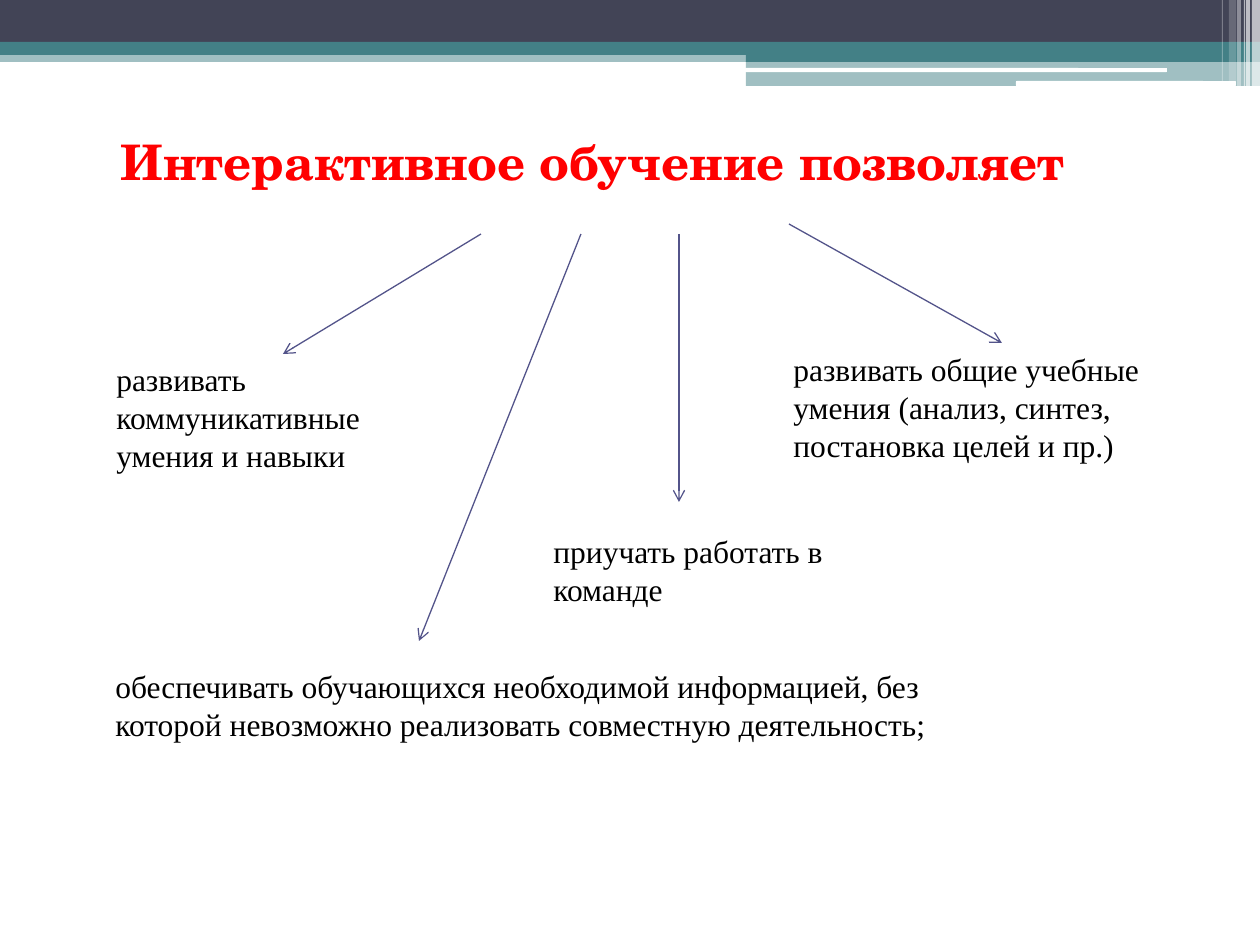
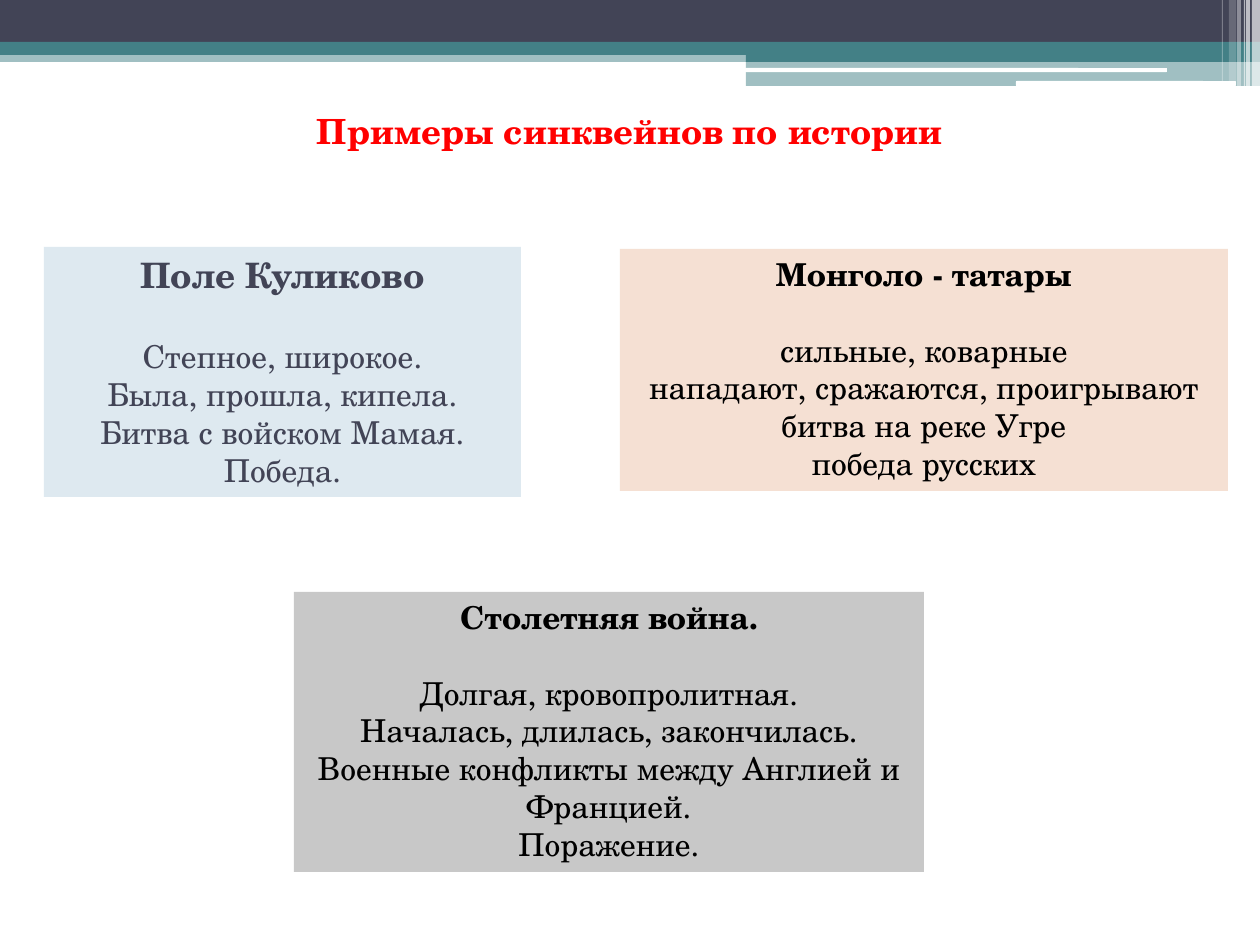
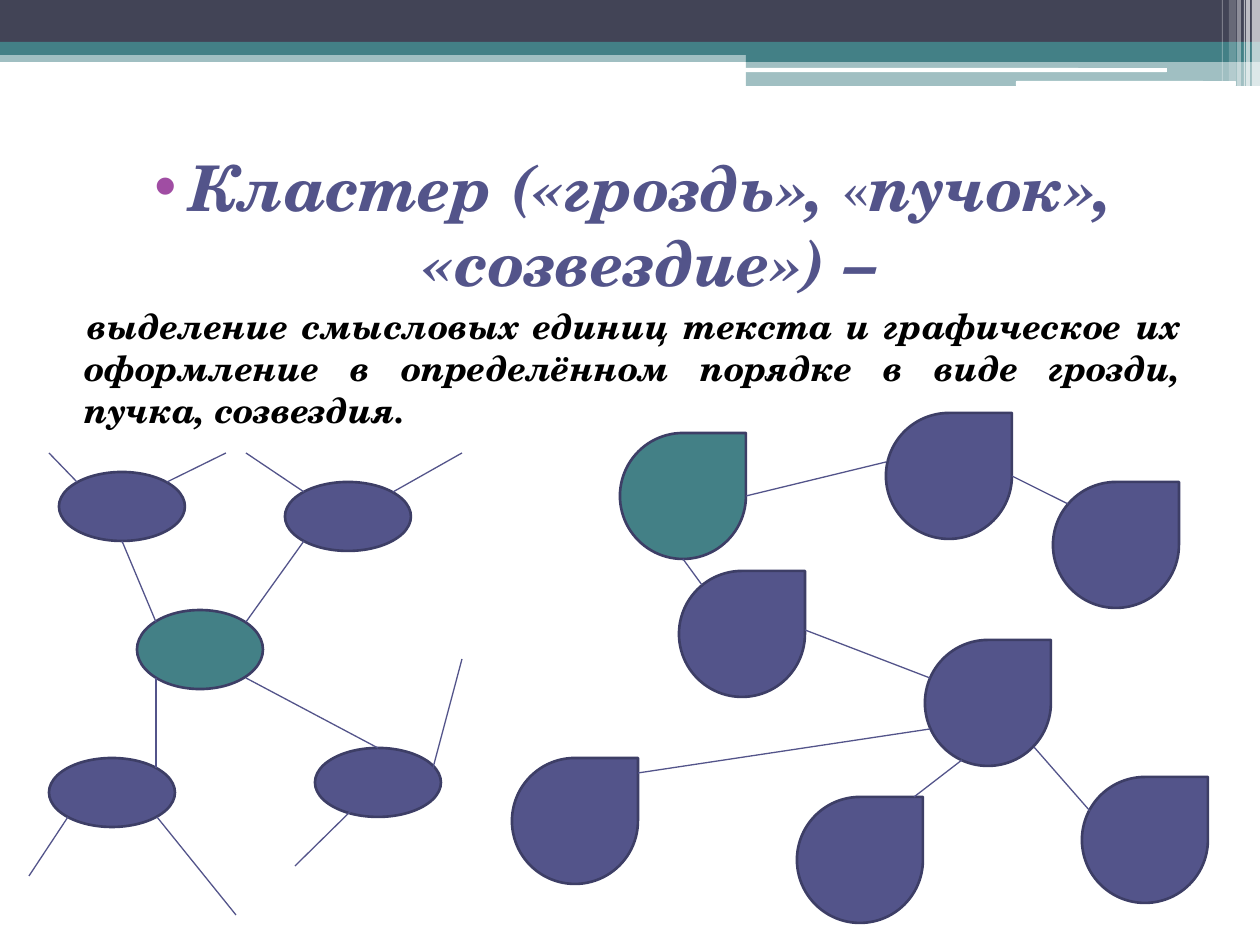
from lxml import etree
from pptx import Presentation
from pptx.dml.color import RGBColor
from pptx.enum.shapes import MSO_CONNECTOR, MSO_SHAPE
from pptx.enum.text import MSO_ANCHOR, MSO_AUTO_SIZE, PP_ALIGN
from pptx.oxml.ns import qn
from pptx.util import Inches, Pt

PX = 914400 // 126
SERIF, TIMES = "TeX Gyre Schola", "Times New Roman"
RECT, ROUND = MSO_SHAPE.RECTANGLE, MSO_SHAPE.ROUNDED_RECTANGLE
OVAL, TEAR = MSO_SHAPE.OVAL, MSO_SHAPE.TEAR
LEFT, MID, FULL = PP_ALIGN.LEFT, PP_ALIGN.CENTER, PP_ALIGN.JUSTIFY
TOP, CENTER = MSO_ANCHOR.TOP, MSO_ANCHOR.MIDDLE
STRAIGHT = MSO_CONNECTOR.STRAIGHT

WHITE = RGBColor(0xFF, 0xFF, 0xFF)
BLACK = RGBColor(0, 0, 0)
RED = RGBColor(0xFF, 0, 0)
SLATE = RGBColor(0x42, 0x44, 0x56)
TEAL = RGBColor(0x43, 0x80, 0x86)
INDIGO = RGBColor(0x53, 0x54, 0x8A)
EDGE = RGBColor(0x3D, 0x3E, 0x66)
PLUM = RGBColor(0xA0, 0x4D, 0xA3)
PEACH = RGBColor(0xF5, 0xE0, 0xD3)
SKY = RGBColor(0xDE, 0xE9, 0xF0)
GRAY = RGBColor(0xC8, 0xC8, 0xC8)


def write(shape, text, first=True, font=SERIF, size=18, color=BLACK, bold=False,
          italic=False, align=LEFT, anchor=TOP, after=0, before=0):
    """Write one paragraph; a text given as a list alternates styled and plain runs."""
    frame = shape.text_frame
    frame.word_wrap = True
    frame.auto_size = MSO_AUTO_SIZE.NONE
    frame.vertical_anchor = anchor
    para = frame.paragraphs[0] if first else frame.add_paragraph()
    para.alignment = align
    para.space_before, para.space_after = Pt(before), Pt(after)
    for n, part in enumerate([text] if isinstance(text, str) else text):
        run = para.add_run()
        run.text = part
        run.font.name, run.font.size = font, Pt(size)
        run.font.color.rgb = color
        run.font.bold = bold and n % 2 == 0
        run.font.italic = italic and n % 2 == 0
    return para


def form(slide, kind, box, fill, edge=None):
    """Add a filled shape, outlined only when an edge colour is given."""
    shape = slide.shapes.add_shape(kind, *[n * PX for n in box])
    shape.shadow.inherit = False
    shape.fill.solid()
    shape.fill.fore_color.rgb = fill
    if edge is None:
        shape.line.fill.background()
    else:
        shape.line.color.rgb = edge
        shape.line.width = Pt(1.5)
    return shape


deck = Presentation()
deck.slide_width, deck.slide_height = Inches(10), Inches(7.5)
goals, poems, cluster = [
    deck.slides.add_slide(deck.slide_layouts[n]) for n in (5, 5, 1)]

# Bands, moved to the master so that all slides share them
bands = [
    (RECT, (0, 50, 1260, 12), TEAL, 50),
    (RECT, (0, 0, 1260, 43), SLATE, 100),
    (RECT, (0, 42, 1260, 13), TEAL, 100),
    (RECT, (746, 49, 514, 13), TEAL, 100),
    (RECT, (746, 61, 514, 25), TEAL, 50),
    (ROUND, (745, 68, 422, 4), WHITE, 100),
    (ROUND, (1016, 81, 220, 5), WHITE, 100),
    (RECT, (1252, 0, 8, 86), WHITE, 65),
    (RECT, (1246, 0, 4, 86), WHITE, 65),
    (RECT, (1244, 0, 1, 86), WHITE, 60),
    (RECT, (1237, 0, 4, 86), WHITE, 40),
    (RECT, (1229, 0, 7, 81), WHITE, 20),
    (RECT, (1222, 0, 1, 81), WHITE, 30),
]
for n, (kind, box, fill, alpha) in enumerate(bands):
    band = form(goals, kind, box, fill)
    band.name = f"Band {n + 1}"
    if alpha < 100:
        tint = next(band.element.spPr.iter(qn("a:srgbClr")))
        etree.SubElement(tint, qn("a:alpha"), val=str(alpha * 1000))
    band.element.nvSpPr.cNvPr.set("id", str(20 + n))
    deck.slide_master.shapes.element.append(band.element)

# Titles
titles = [
    (goals, (108, 125, 1023, 72), "Интерактивное обучение позволяет", 28, LEFT),
    (poems, (302, 110, 656, 42), "Примеры синквейнов по истории", 19.8, MID),
]
for slide, box, text, size, align in titles:
    title = slide.shapes.title
    title.left, title.top, title.width, title.height = [n * PX for n in box]
    write(title, text, size=size, color=RED, bold=True, align=align, anchor=CENTER)

# Goals of interactive learning
notes = [
    ((104, 354, 315, 127), "развивать коммуникативные умения и навыки"),
    ((541, 526, 315, 89), "приучать работать в команде"),
    ((103, 661, 922, 127), "обеспечивать обучающихся необходимой информацией, "
     "без которой невозможно реализовать совместную деятельность;"),
    ((781, 344, 444, 127), "развивать общие учебные умения "
     "(анализ, синтез, постановка целей и пр.)"),
]
for box, text in notes:
    write(goals.shapes.add_textbox(*[n * PX for n in box]), text, font=TIMES)
arrows = [
    (481, 234, 283, 354), (581, 234, 419, 641),
    (679, 234, 679, 502), (789, 224, 1002, 343),
]

# Poems
cards = [
    ((620, 249, 608, 242), PEACH, BLACK, 18, 21.5, "Монголо - татары",
     ["сильные, коварные", "нападают, сражаются, проигрывают",
      "битва на реке Угре", "победа русских"]),
    ((44, 247, 477, 250), SKY, SLATE, 20, 24, "Поле Куликово",
     ["Степное, широкое.", "Была, прошла, кипела.",
      "Битва с войском Мамая.", "Победа."]),
    ((294, 592, 630, 280), GRAY, BLACK, 18, 21.5, "Столетняя война.",
     ["Долгая, кровопролитная.", "Началась, длилась, закончилась.",
      "Военные конфликты между Англией и Францией.", "Поражение."]),
]
for box, fill, color, size, gap, head, verse in cards:
    card = form(poems, RECT, box, fill)
    write(card, head, size=size, color=color, bold=True, align=MID, after=gap)
    for text in verse:
        write(card, text, first=False, color=color, align=MID)

# Cluster
blank = cluster.shapes.title.element
blank.getparent().remove(blank)
body = cluster.placeholders[1]
body.left, body.top, body.width, body.height = [
    n * PX for n in (59, 142, 1134, 591)]
term = write(body, ["Кластер («гроздь»,", " «", "пучок», «созвездие») –"],
             size=36, color=INDIGO, bold=True, italic=True, align=MID)
sense = write(body, "выделение смысловых единиц текста и графическое их оформление "
              "в определённом порядке в виде грозди, пучка, созвездия.",
              first=False, size=20, bold=True, italic=True, align=FULL, before=3)
for para, left, indent in ((term, 50, -35), (sense, 13, 3)):
    props = para._p.get_or_add_pPr()
    props.set("marL", str(left * PX))
    props.set("indent", str(indent * PX))
    if para is term:
        tint = etree.SubElement(props, qn("a:buClr"))
        etree.SubElement(tint, qn("a:srgbClr"), val=str(PLUM))
        etree.SubElement(props, qn("a:buChar"), char="•")
    else:
        etree.SubElement(props, qn("a:buNone"))

form(cluster, OVAL, (137, 610, 126, 79), TEAL, EDGE)
for x, y in ((59, 472), (285, 482), (49, 758), (315, 748)):
    form(cluster, OVAL, (x, y, 126, 69), INDIGO, EDGE)
form(cluster, TEAR, (620, 433, 126, 126), TEAL, EDGE)
for x, y in ((925, 640), (1053, 482), (886, 413), (797, 797),
             (512, 758), (1082, 777), (679, 571)):
    form(cluster, TEAR, (x, y, 126, 126), INDIGO, EDGE)
links = [
    (122, 541, 156, 622), (246, 622, 304, 541), (156, 768, 156, 678),
    (246, 678, 378, 748), (49, 453, 77, 482), (167, 482, 226, 453),
    (304, 492, 246, 453), (393, 492, 462, 453), (68, 817, 29, 876),
    (236, 915, 157, 817), (355, 807, 295, 866), (433, 768, 462, 659),
    (746, 496, 886, 462), (1012, 476, 1068, 504), (683, 559, 702, 585),
    (805, 630, 930, 678), (930, 729, 638, 773), (962, 760, 914, 797),
    (1034, 747, 1090, 811),
]

# Lines of both diagrams
for slide, paths in ((goals, arrows), (cluster, links)):
    for ends in paths:
        link = slide.shapes.add_connector(STRAIGHT, *[n * PX for n in ends])
        link.line.color.rgb = INDIGO
        link.line.width = Pt(0.75)
        props = link.element.spPr
        if slide is goals:
            etree.SubElement(props.find(qn("a:ln")), qn("a:tailEnd"), type="arrow")
        etree.SubElement(props, qn("a:effectLst"))

deck.save("out.pptx")
